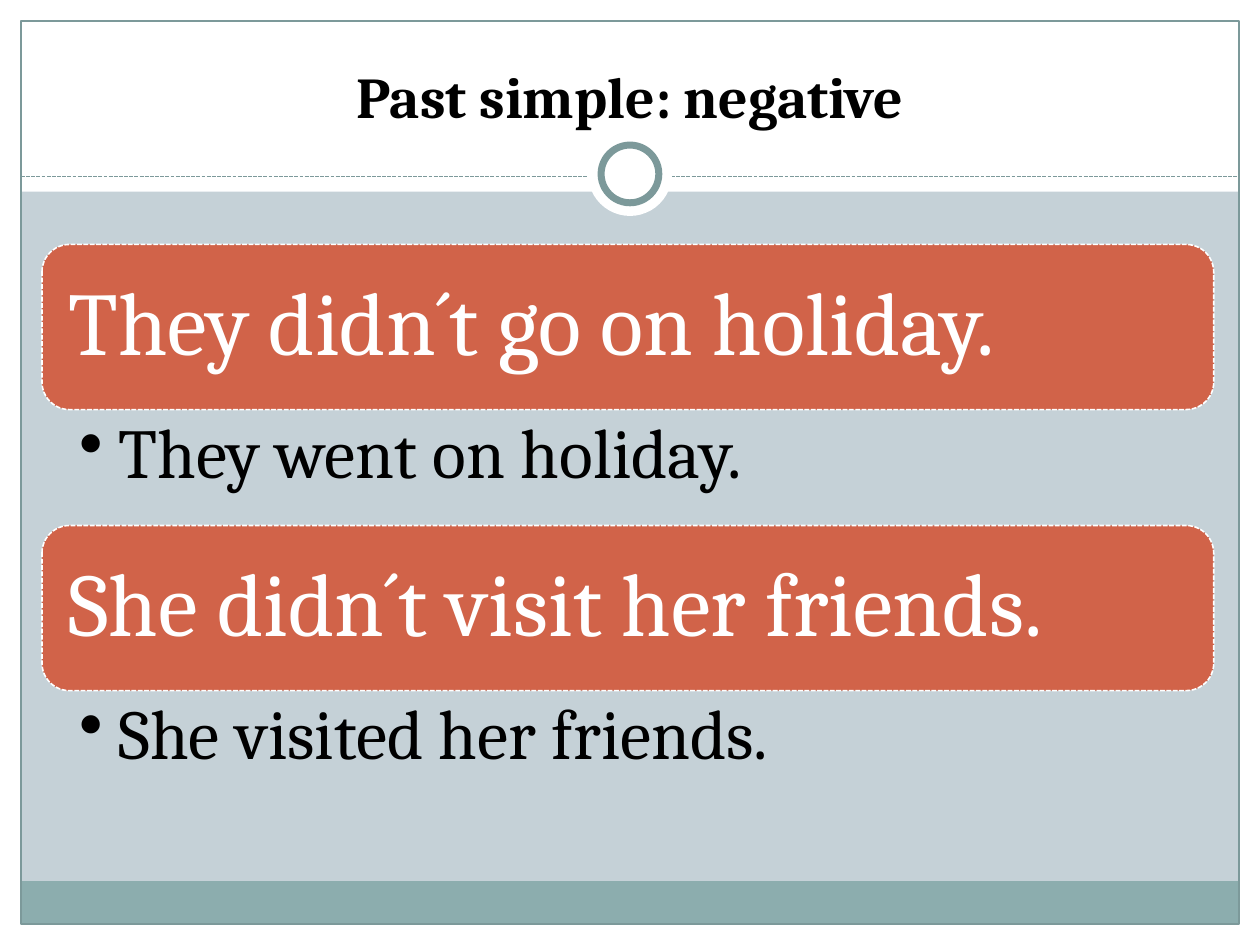
"""Build the slide on the negative form of the past simple."""
from lxml import etree
from pptx import Presentation
from pptx.dml.color import RGBColor
from pptx.enum.dml import MSO_LINE
from pptx.enum.shapes import MSO_CONNECTOR, MSO_SHAPE
from pptx.enum.text import MSO_ANCHOR, PP_ALIGN
from pptx.oxml.ns import qn
from pptx.util import Pt

RECT, OVAL, ROUND = MSO_SHAPE.RECTANGLE, MSO_SHAPE.OVAL, MSO_SHAPE.ROUNDED_RECTANGLE
LINE, DASH = MSO_CONNECTOR.STRAIGHT, MSO_LINE.SQUARE_DOT
LEFT, CENTER = PP_ALIGN.LEFT, PP_ALIGN.CENTER
TOP, MIDDLE, BOTTOM = MSO_ANCHOR.TOP, MSO_ANCHOR.MIDDLE, MSO_ANCHOR.BOTTOM

TITLE = "Past simple: negative"
PAIRS = [
    ("They didn´t go on holiday.", "They went on holiday."),
    ("She didn´t visit her friends.", "She visited her friends."),
]
THEME = {
    "font": "Cambria", "title": 33, "head": 51, "body": 40,
    "back": "C5D1D7", "white": "FFFFFF", "black": "000000",
    "band": "8CADAE", "edge": "7C999A", "card": "D16349",
}
WIDE, HIGH, EDGE = 720, 540, 12
HEAD, RULE, BAND = 109.5, 101, 24.5
LEFT_X, TOP_Y, CARD_W, CARD_H, NOTE_H = 24, 139.7, 669.6, 94.4, 66.2


def color(name):
    return RGBColor.from_string(THEME[name])


def stroke(line, name, width, dash=None):
    line.color.rgb = color(name)
    line.width = Pt(width)
    if dash is not None:
        line.dash_style = dash


def block(slide, kind, box, fill=None, line=None, width=0.75, dash=None):
    shape = slide.shapes.add_shape(kind, *map(Pt, box))
    shape.shadow.inherit = False
    if fill:
        shape.fill.solid()
        shape.fill.fore_color.rgb = color(fill)
    else:
        shape.fill.background()
    if line:
        stroke(shape.line, line, width, dash)
    else:
        shape.line.fill.background()
    return shape


def write(shape, text, size, ink, anchor, align=LEFT, pads=(7.2, 3.6, 7.2, 3.6)):
    frame = shape.text_frame
    frame.word_wrap = True
    frame.vertical_anchor = anchor
    (frame.margin_left, frame.margin_top,
     frame.margin_right, frame.margin_bottom) = map(Pt, pads)
    frame.text = text
    para = frame.paragraphs[0]
    para.alignment = align
    para.font.name = THEME["font"]
    para.font.size = Pt(THEME[size])
    para.font.color.rgb = color(ink)
    return para


def bullet(para, indent):
    props = para._p.get_or_add_pPr()
    props.set("marL", str(Pt(indent)))
    props.set("indent", str(-Pt(indent)))
    mark = etree.Element(qn("a:buChar"), char="•")
    props.find(qn("a:defRPr")).addprevious(mark)


def frame(slide):
    for box in [
        (0, HIGH - EDGE, WIDE, EDGE), (0, 0, WIDE, HEAD),
        (0, 0, EDGE, HIGH), (WIDE - EDGE, 0, EDGE, HIGH),
    ]:
        block(slide, RECT, box, "white")
    inner = WIDE - 2 * EDGE
    block(slide, RECT, (EDGE, HIGH - EDGE - BAND, inner, BAND), "band")
    block(slide, RECT, (EDGE, EDGE, inner, HIGH - 2 * EDGE), line="edge")
    rule = slide.shapes.add_connector(
        LINE, Pt(EDGE), Pt(RULE), Pt(WIDE - EDGE), Pt(RULE))
    stroke(rule.line, "edge", 0.75, DASH)
    etree.SubElement(rule._element.spPr, qn("a:effectLst"))
    for size, line in [(48, None), (33, "edge")]:
        box = ((WIDE - size) / 2, 99.4 - size / 2, size, size)
        block(slide, OVAL, box, "white", line, 4)


def heading(slide):
    title = slide.shapes.title
    title.left, title.top, title.width, title.height = map(Pt, (24, 18, 672, 60))
    write(title, TITLE, "title", "black", BOTTOM, CENTER).font.bold = True
    slide.shapes._spTree.append(title._element)


def cards(slide):
    for row, (head, note) in enumerate(PAIRS):
        top = TOP_Y + row * (CARD_H + NOTE_H)
        card = block(slide, ROUND, (LEFT_X, top, CARD_W, CARD_H),
                     "card", "white", 0.9, DASH)
        para = write(card, head, "head", "white", MIDDLE, pads=(10.6,) * 4)
        para.line_spacing = 0.9
        box = slide.shapes.add_textbox(
            *map(Pt, (LEFT_X, top + CARD_H, CARD_W, NOTE_H)))
        para = write(box, note, "body", "black", TOP, pads=(21.3, 5, 28.8, 5))
        para.line_spacing = 0.9
        bullet(para, 22.5)


def main():
    deck = Presentation()
    deck.slide_width, deck.slide_height = Pt(WIDE), Pt(HIGH)
    slide = deck.slides.add_slide(deck.slide_layouts[5])
    slide.background.fill.solid()
    slide.background.fill.fore_color.rgb = color("back")
    frame(slide)
    heading(slide)
    cards(slide)
    deck.save("out.pptx")


if __name__ == "__main__":
    main()
